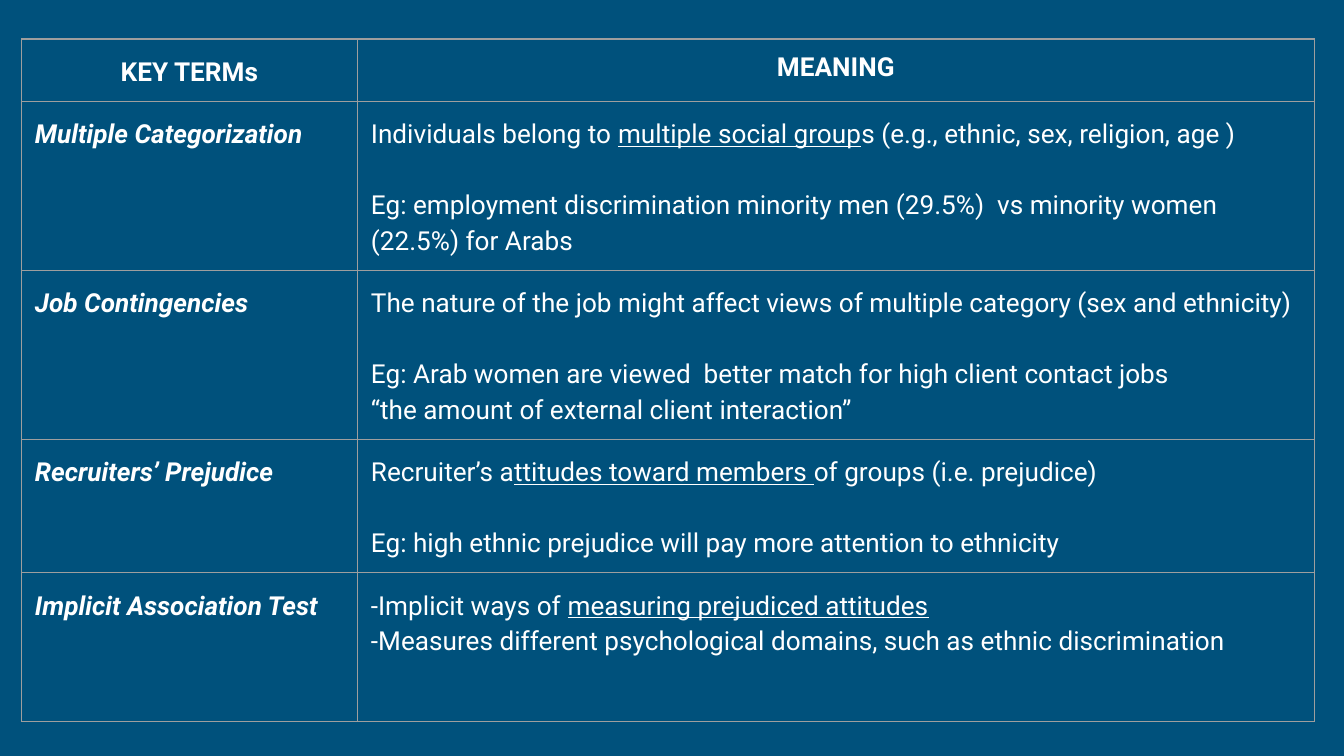
from lxml.etree import SubElement
from pptx import Presentation
from pptx.dml.color import RGBColor
from pptx.enum.text import PP_ALIGN
from pptx.oxml.ns import qn
from pptx.util import Pt

PX = 4572
COLORS = {"bg": "00517C", "text": "FFFFFF", "border": "9E9E9E"}
BASE = {"name": "Roboto", "size": Pt(14), "bold": False, "italic": False}
HEAD = {**BASE, "bold": True}
TERM = {**HEAD, "italic": True}
HEADINGS = ("KEY TERMs", "MEANING")
COLS = (500, 1424)
ROWS = (88, 242, 242, 192, 222)
MARGIN = 20

# each meaning is a list of paragraphs; text between bars is underlined
TERMS = [
    ("Multiple Categorization", [
        "Individuals belong to |multiple social group|s (e.g., ethnic, sex, religion, age )",
        "Eg: employment discrimination minority men (29.5%)  vs minority women (22.5%) for Arabs",
    ]),
    ("Job Contingencies", [
        "The nature of the job might affect views of multiple category (sex and ethnicity)",
        "Eg: Arab women are viewed  better match for high client contact jobs",
        "“the amount of external client interaction”",
    ]),
    ("Recruiters’ Prejudice", [
        "Recruiter’s a|ttitudes toward members |of groups (i.e. prejudice)",
        "Eg: high ethnic prejudice will pay more attention to ethnicity",
    ]),
    ("Implicit Association Test", [
        "-Implicit ways of |measuring prejudiced attitudes",
        "-Measures different psychological domains, such as ethnic discrimination",
    ]),
]


def rgb(key):
    return RGBColor.from_string(COLORS[key])


def add_borders(cell):
    tcPr = cell._tc.get_or_add_tcPr()
    for i, side in enumerate(("lnL", "lnR", "lnT", "lnB")):
        ln = tcPr.makeelement(qn(f"a:{side}"), {"w": str(Pt(0.75))})
        fill = SubElement(ln, qn("a:solidFill"))
        SubElement(fill, qn("a:srgbClr"), val=COLORS["border"])
        tcPr.insert(i, ln)


def fill_cell(cell, lines, fmt, align=PP_ALIGN.LEFT, spacing=1.15):
    for side in ("left", "right", "top", "bottom"):
        setattr(cell, f"margin_{side}", MARGIN * PX)
    cell.fill.background()
    add_borders(cell)
    tf = cell.text_frame
    for i, line in enumerate(lines):
        p = tf.add_paragraph() if i else tf.paragraphs[0]
        p.alignment = align
        p.line_spacing = spacing
        if line.startswith("Eg:"):
            p.space_before = Pt(19)
        for j, part in enumerate(line.split("|")):
            r = p.add_run()
            r.text = part
            for name, value in fmt.items():
                setattr(r.font, name, value)
            r.font.underline = j % 2 == 1
            r.font.color.rgb = rgb("text")


def add_terms_table(s, left, top):
    box = [v * PX for v in (left, top, sum(COLS), sum(ROWS))]
    table = s.shapes.add_table(len(ROWS), len(COLS), *box).table
    table.first_row = table.horz_banding = False
    for col, width in zip(table.columns, COLS):
        col.width = width * PX
    for row, height in zip(table.rows, ROWS):
        row.height = height * PX
    for c, (heading, spacing) in enumerate(zip(HEADINGS, (1.15, 1.0))):
        fill_cell(table.cell(0, c), [heading], HEAD, PP_ALIGN.CENTER, spacing)
    for i, (term, meaning) in enumerate(TERMS, 1):
        fill_cell(table.cell(i, 0), [term], TERM)
        fill_cell(table.cell(i, 1), meaning, BASE)


def main():
    prs = Presentation()
    prs.slide_width, prs.slide_height = 2000 * PX, 1125 * PX
    s = prs.slides.add_slide(prs.slide_layouts[6])
    s.background.fill.solid()
    s.background.fill.fore_color.rgb = rgb("bg")
    add_terms_table(s, 32, 58)
    prs.save("out.pptx")


if __name__ == "__main__":
    main()
